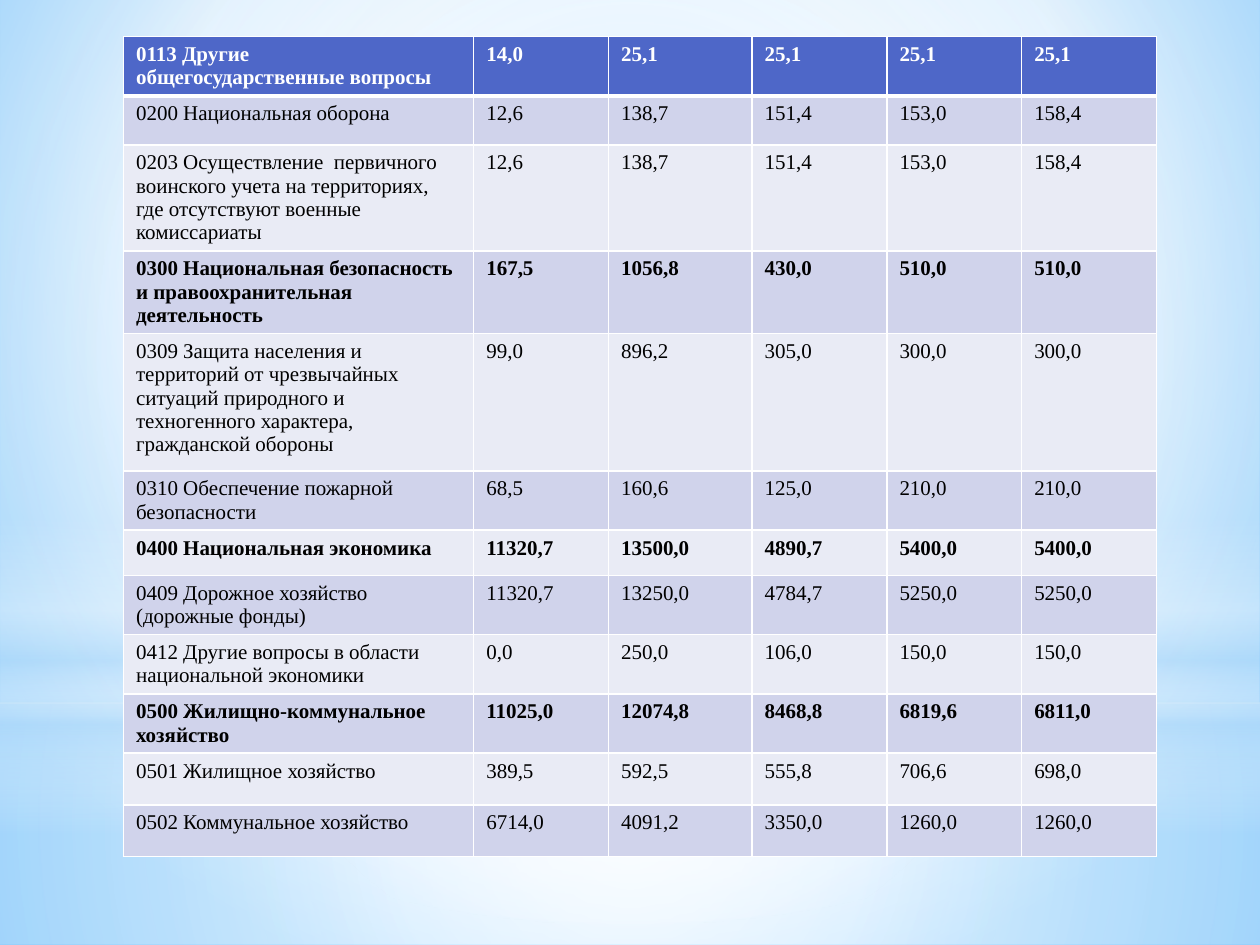
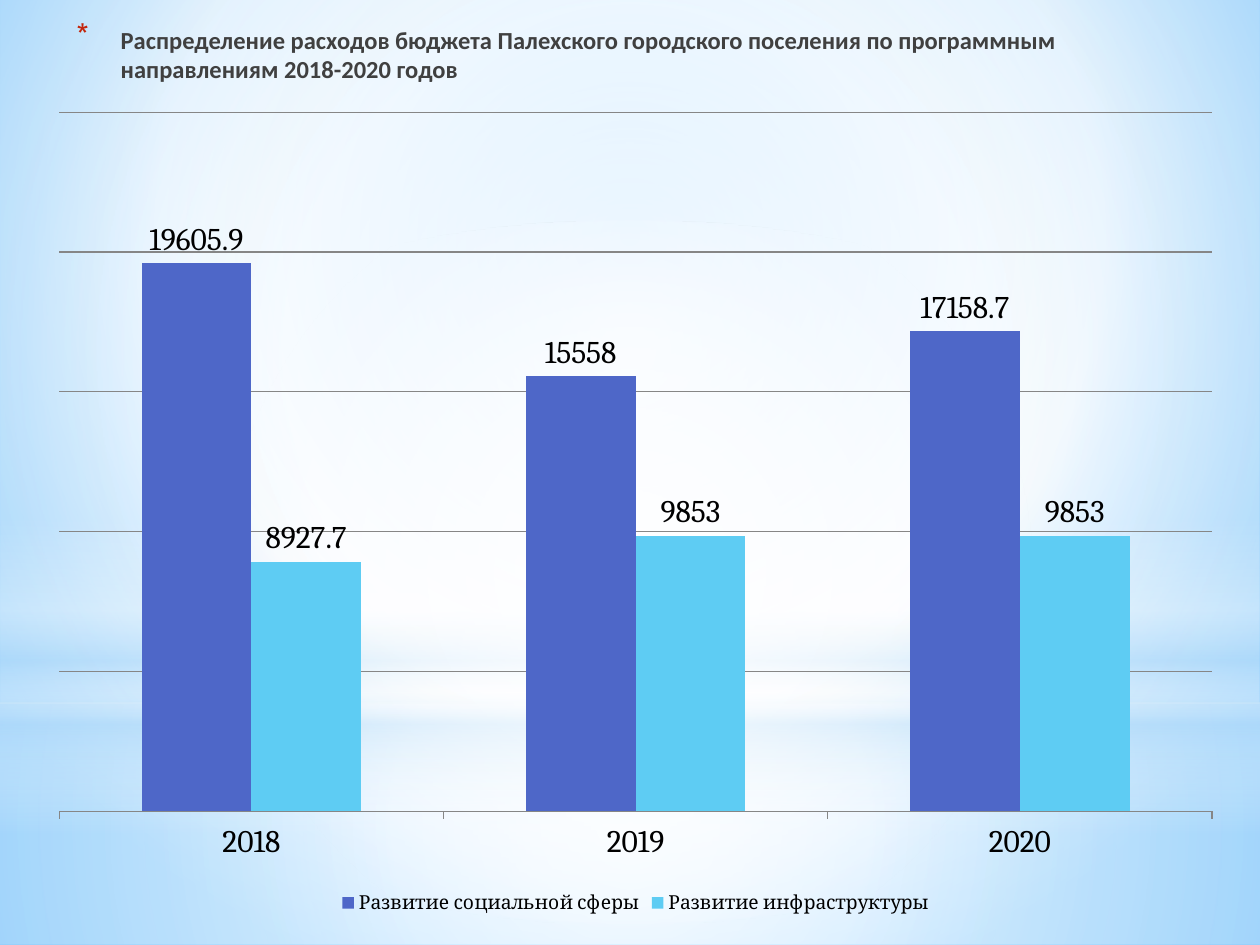
from dataclasses import dataclass

from lxml import etree
from pptx import Presentation
from pptx import util as u
from pptx.chart import data as chart_data
from pptx.dml import color
from pptx.enum import chart as ch
from pptx.enum import shapes, text
from pptx.oxml import ns


@dataclass(frozen=True)
class Theme:
    social: str = "4E67C8"
    infrastructure: str = "5ECCF3"
    band_dark: str = "D0D3EB"
    band_light: str = "E9EBF5"
    white: str = "FFFFFF"
    black: str = "000000"
    haze: str = "B4DCFA"
    sky: str = "9ED5FF"
    sky_deep: str = "5BB9FF"
    title: str = "404040"
    bullet: str = "C3260C"
    grid: str = "868686"
    table_font: str = "Times New Roman"
    title_font: str = "Calibri"
    chart_font: str = "Cambria"
    table_size: int = 12
    title_size: int = 14
    chart_size: int = 18
    legend_size: int = 11


THEME = Theme()
CENTRE = (50, 50, 50, 50)

COLUMNS = [2.78, 1.07, 1.14, 1.07, 1.07, 1.07]
BUDGET = [
    (0.39, True, "0113 Другие общегосударственные вопросы", "14,0 25,1 25,1 25,1 25,1"),
    (0.39, False, "0200 Национальная оборона", "12,6 138,7 151,4 153,0 158,4"),
    (0.39, False, "0203 Осуществление  первичного воинского учета на территориях, "
     "где отсутствуют военные комиссариаты", "12,6 138,7 151,4 153,0 158,4"),
    (0.52, True, "0300 Национальная безопасность и правоохранительная деятельность",
     "167,5 1056,8 430,0 510,0 510,0"),
    (1.09, False, "0309 Защита населения и территорий от чрезвычайных ситуаций природного "
     "и техногенного характера, гражданской обороны", "99,0 896,2 305,0 300,0 300,0"),
    (0.46, False, "0310 Обеспечение пожарной безопасности", "68,5 160,6 125,0 210,0 210,0"),
    (0.36, True, "0400 Национальная экономика", "11320,7 13500,0 4890,7 5400,0 5400,0"),
    (0.38, False, "0409 Дорожное хозяйство (дорожные фонды)",
     "11320,7 13250,0 4784,7 5250,0 5250,0"),
    (0.38, False, "0412 Другие вопросы в области национальной экономики",
     "0,0 250,0 106,0 150,0 150,0"),
    (0.41, True, "0500 Жилищно-коммунальное хозяйство",
     "11025,0 12074,8 8468,8 6819,6 6811,0"),
    (0.41, False, "0501 Жилищное хозяйство", "389,5 592,5 555,8 706,6 698,0"),
    (0.41, False, "0502 Коммунальное хозяйство", "6714,0 4091,2 3350,0 1260,0 1260,0"),
]

TITLE = ("Распределение расходов бюджета Палехского городского поселения "
         "по программным направлениям 2018-2020 годов")
YEARS = ["2018", "2019", "2020"]
PROGRAMMES = [
    ("Развитие социальной сферы", [19605.9, 15558, 17158.7], THEME.social),
    ("Развитие инфраструктуры", [8927.7, 9853, 9853], THEME.infrastructure),
]


def rgb(value):
    return color.RGBColor.from_string(value)


def inches(*lengths):
    return [u.Inches(length) for length in lengths]


def add_node(parent, tag, **attributes):
    node = etree.SubElement(parent, ns.qn(tag))
    for name, value in attributes.items():
        node.set(name, str(value))
    return node


def style_font(font, family, size, colour, bold=False):
    font.name = family
    font.size = u.Pt(size)
    font.bold = bold
    font.color.rgb = rgb(colour)


def set_gradient(fill, owner, stops, focus=None):
    fill.gradient()
    gradient = owner.find(".//" + ns.qn("a:gradFill"))
    for child in list(gradient):
        gradient.remove(child)
    stop_list = add_node(gradient, "a:gsLst")
    for position, colour, opacity in stops:
        stop = add_node(stop_list, "a:gs", pos=position * 1000)
        tint = add_node(stop, "a:srgbClr", val=colour)
        if opacity < 100:
            add_node(tint, "a:alpha", val=opacity * 1000)
    if focus:
        circle = add_node(gradient, "a:path", path="circle")
        sides = {side: share * 1000 for side, share in zip("ltrb", focus)}
        add_node(circle, "a:fillToRect", **sides)
    else:
        add_node(gradient, "a:lin", ang=90 * 60000, scaled=0)


def build_backdrop(master, slide):
    white, haze = THEME.white, THEME.haze
    sky = [(0, THEME.sky, 100), (60, white, 100), (100, THEME.sky_deep, 100)]
    set_gradient(master.background.fill, master.element, sky, (20, 10, 20, 60))
    rectangle, oval = shapes.MSO_SHAPE.RECTANGLE, shapes.MSO_SHAPE.OVAL
    layers = [
        (rectangle, 5.58, 1.92, [(0, white, 91), (37, white, 76), (100, haze, 79)], CENTRE),
        (rectangle, 0, 5.58, [(0, white, 89), (48, white, 62), (100, haze, 79)], CENTRE),
        (rectangle, 4.12, 2.5, [(0, white, 0), (29, white, 30), (45, haze, 40),
                                (55, white, 26), (65, haze, 60), (100, white, 0)], None),
        (oval, 1.75, 5.58, [(0, white, 100), (56, white, 0)], CENTRE),
    ]
    for order, (outline, top, height, stops, focus) in enumerate(layers):
        layer = slide.shapes.add_shape(outline, *inches(0, top, 10, height))
        layer.shadow.inherit = False
        layer.line.fill.background()
        set_gradient(layer.fill, layer.element, stops, focus)
        layer.element.find(".//" + ns.qn("p:cNvPr")).set("id", str(100 + order))
        master.shapes.element.insert(2 + order, layer.element)


def set_borders(cell, **widths):
    properties = cell._tc.get_or_add_tcPr()
    for side in "LRTB":
        width = u.Pt(widths.get(side, 1))
        border = add_node(properties, "a:ln" + side, w=int(width))
        add_node(add_node(border, "a:solidFill"), "a:srgbClr", val=THEME.white)


def fill_cell(cell, content, row, bold):
    set_borders(cell, T=3 if row == 1 else 1, B=3 if row == 0 else 1)
    band = THEME.band_dark if row % 2 else THEME.band_light
    cell.fill.solid()
    cell.fill.fore_color.rgb = rgb(band if row else THEME.social)
    cell.text = content
    ink = THEME.black if row else THEME.white
    style_font(cell.text_frame.paragraphs[0].font, THEME.table_font,
               THEME.table_size, ink, bold)


def add_budget_table(slide):
    frame = slide.shapes.add_table(len(BUDGET), len(COLUMNS), *inches(0.98, 0.29, 8.22, 6.97))
    budget = frame.table
    for column, width in zip(budget.columns, COLUMNS):
        column.width = u.Inches(width)
    for row, (height, bold, section, amounts) in enumerate(BUDGET):
        budget.rows[row].height = u.Inches(height)
        for column, content in enumerate([section, *amounts.split()]):
            fill_cell(budget.cell(row, column), content, row, bold)


def add_title(slide):
    heading = slide.shapes.add_textbox(*inches(0.51, 0.13, 9, 0.6)).text_frame
    heading.word_wrap = True
    heading.vertical_anchor = text.MSO_ANCHOR.MIDDLE
    line = heading.paragraphs[0]
    line.text = TITLE
    style_font(line.font, THEME.title_font, THEME.title_size, THEME.title, True)
    properties = line._p.get_or_add_pPr()
    indent = int(u.Inches(0.35))
    properties.set("marL", str(indent))
    properties.set("indent", str(-indent))
    bullet_colour = etree.Element(ns.qn("a:buClr"))
    add_node(bullet_colour, "a:srgbClr", val=THEME.bullet)
    properties.insert(0, bullet_colour)
    bullet_size = etree.Element(ns.qn("a:buSzPct"), val="128000")
    properties.insert(1, bullet_size)
    bullet = etree.Element(ns.qn("a:buChar"), char="*")
    properties.insert(2, bullet)


def style_axes(chart):
    amounts = chart.value_axis
    amounts.visible = False
    amounts.minimum_scale, amounts.maximum_scale = 0, 25000
    amounts.major_unit = 5000
    amounts.has_major_gridlines = True
    years = chart.category_axis
    years.major_tick_mark = ch.XL_TICK_MARK.OUTSIDE
    for line in (amounts.major_gridlines.format.line, years.format.line):
        line.color.rgb = rgb(THEME.grid)
        line.width = u.Pt(0.75)


def add_programme_chart(slide):
    figures = chart_data.CategoryChartData()
    figures.categories = YEARS
    for name, amounts, _ in PROGRAMMES:
        figures.add_series(name, amounts)
    chart = slide.shapes.add_chart(ch.XL_CHART_TYPE.COLUMN_CLUSTERED,
                                   *inches(0.28, 0.76, 9.53, 6.54), figures).chart
    style_font(chart.font, THEME.chart_font, THEME.chart_size, THEME.black)
    chart.has_title = False
    chart.has_legend = True
    chart.legend.position = ch.XL_LEGEND_POSITION.BOTTOM
    chart.legend.include_in_layout = False
    style_font(chart.legend.font, THEME.chart_font, THEME.legend_size, THEME.black)
    style_axes(chart)
    plot = chart.plots[0]
    plot.gap_width = 150
    plot.overlap = 0
    plot.vary_by_categories = False
    for series, (_, _, colour) in zip(plot.series, PROGRAMMES):
        series.format.fill.solid()
        series.format.fill.fore_color.rgb = rgb(colour)
        series.data_labels.show_value = True
        series.data_labels.position = ch.XL_LABEL_POSITION.OUTSIDE_END


def main():
    deck = Presentation()
    deck.slide_width, deck.slide_height = inches(10, 7.5)
    blank = deck.slide_layouts[6]
    budget_slide = deck.slides.add_slide(blank)
    build_backdrop(deck.slide_master, budget_slide)
    add_budget_table(budget_slide)
    programme_slide = deck.slides.add_slide(blank)
    add_title(programme_slide)
    add_programme_chart(programme_slide)
    deck.save("out.pptx")


if __name__ == "__main__":
    main()
